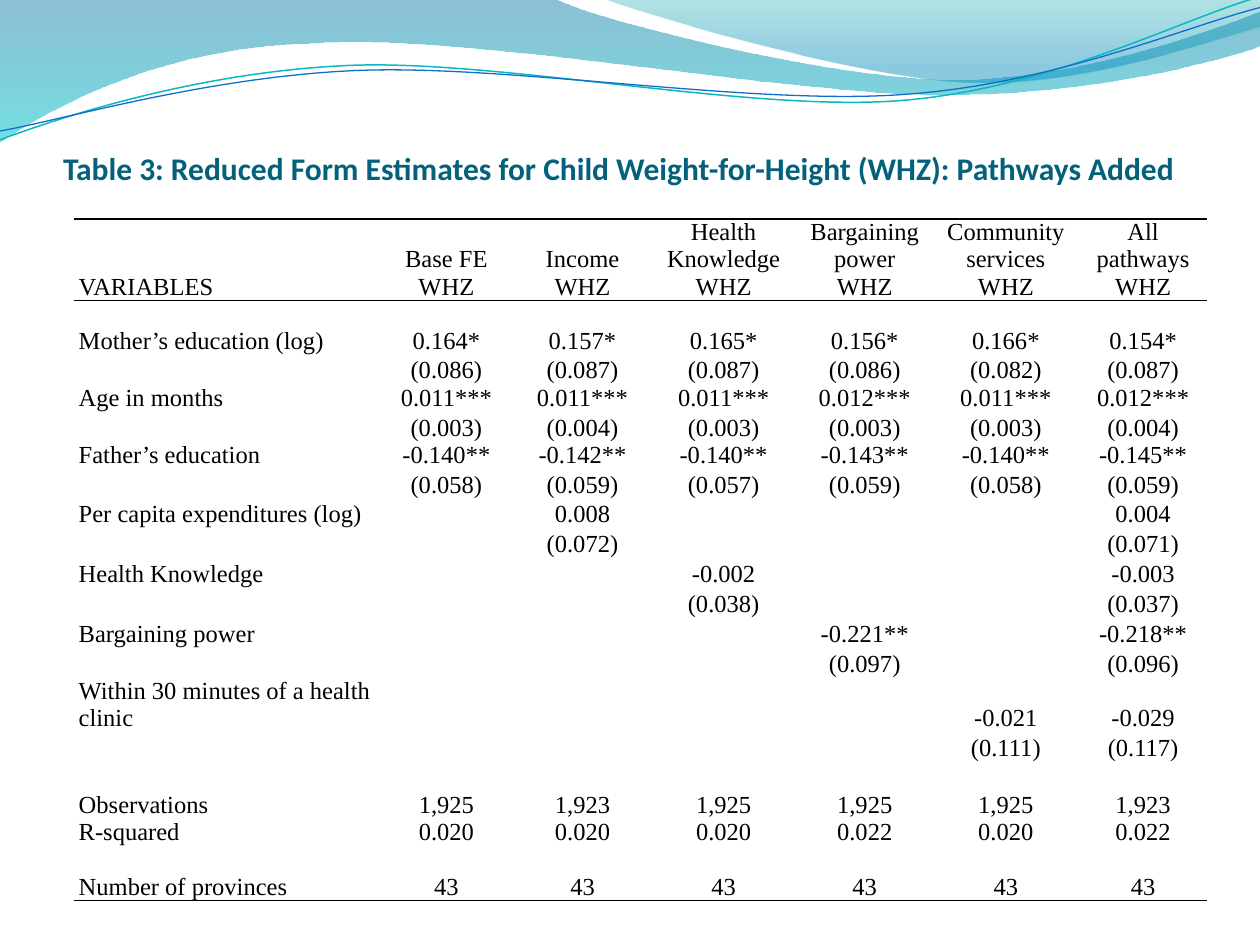
from lxml import etree
from pptx import Presentation
from pptx.dml.color import RGBColor
from pptx.enum.text import MSO_ANCHOR, PP_ALIGN
from pptx.oxml.ns import qn
from pptx.util import Pt

BOTTOM = MSO_ANCHOR.BOTTOM
LEFT, CENTER = PP_ALIGN.LEFT, PP_ALIGN.CENTER
TITLE_ONLY = 5
NO_STYLE_NO_GRID = "{2D5ABB26-0587-4C30-8999-92F81FD0307C}"

COLORS = {
    "title": "04617B", "text": "000000", "rule": "000000",
    "deep": "0074A1", "aqua": "00C6CF", "teal": "00A1A9", "sky": "008BBF",
    "teal line": "0AB8BF", "blue line": "0F6FC6",
}

# Each wave is a start point, then segments: 2 numbers for a line, 6 for a curve (inches).
BROAD_WAVE = [
    (0, 0), (4.4, -0.01), (4.76, 0.17, 6.64, 0.63, 7.58, 0.63),
    (8.53, 0.63, 9.58, 0.26, 10, 0.09), (10.01, 0.36),
    (9.83, 0.44, 8.7, 0.76, 7.46, 0.75), (6.22, 0.75, 3.82, 0.28, 2.57, 0.34),
    (1.29, 0.36, 0.46, 0.83, -0.01, 1.13),
]
RIGHT_WAVE = [
    (4.79, -0.01), (5.09, 0.11, 6.82, 0.62, 7.69, 0.65),
    (8.56, 0.69, 9.61, 0.32, 10, 0.21), (10, 0),
]
TEAL_LINE = [
    (0, 1.11), (0.48, 0.93, 1.58, 0.57, 2.77, 0.52),
    (3.95, 0.47, 5.93, 0.89, 7.13, 0.8), (8.33, 0.71, 9.38, 0.15, 9.98, -0.02),
]
BLUE_LINE = [
    (0, 1.04), (0.47, 0.96, 1.64, 0.61, 2.83, 0.56),
    (4.03, 0.51, 5.97, 0.84, 7.17, 0.75), (8.36, 0.67, 9.41, 0.21, 10, 0.06),
]

COLUMN_WIDTHS = [174.2, 77.8, 77.8, 83.5, 77.8, 83.5, 73.4]
TIGHT, LOOSE, DOUBLE = 15.4, 17.1, 30.9
ROWS = [
    (LOOSE, "||||||"),
    (DOUBLE, "|Base FE|Income|Health Knowledge|Bargaining power|Community services|All pathways"),
    (TIGHT, "VARIABLES|WHZ|WHZ|WHZ|WHZ|WHZ|WHZ"),
    (TIGHT, "||||||"),
    (TIGHT, "Mother’s education (log)|0.164*|0.157*|0.165*|0.156*|0.166*|0.154*"),
    (LOOSE, "|(0.086)|(0.087)|(0.087)|(0.086)|(0.082)|(0.087)"),
    (TIGHT, "Age in months|0.011***|0.011***|0.011***|0.012***|0.011***|0.012***"),
    (LOOSE, "|(0.003)|(0.004)|(0.003)|(0.003)|(0.003)|(0.004)"),
    (TIGHT, "Father’s education|-0.140**|-0.142**|-0.140**|-0.143**|-0.140**|-0.145**"),
    (LOOSE, "|(0.058)|(0.059)|(0.057)|(0.059)|(0.058)|(0.059)"),
    (LOOSE, "Per capita expenditures (log)||0.008||||0.004"),
    (LOOSE, "||(0.072)||||(0.071)"),
    (LOOSE, "Health Knowledge|||-0.002|||-0.003"),
    (LOOSE, "|||(0.038)|||(0.037)"),
    (LOOSE, "Bargaining power||||-0.221**||-0.218**"),
    (LOOSE, "||||(0.097)||(0.096)"),
    (DOUBLE, "Within 30 minutes of a health clinic|||||-0.021|-0.029"),
    (LOOSE, "|||||(0.111)|(0.117)"),
    (LOOSE, "||||||"),
    (TIGHT, "Observations|1,925|1,923|1,925|1,925|1,925|1,923"),
    (TIGHT, "R-squared|0.020|0.020|0.020|0.022|0.020|0.022"),
    (DOUBLE, "Number of provinces|43|43|43|43|43|43"),
]
LAST_ROW = len(ROWS) - 1
RULED_ROWS = (0, 2, LAST_ROW)


def color(name):
    return RGBColor.from_string(COLORS[name])


def point_pairs(segment):
    """Split a flat run of inches into (x, y) pairs of lengths."""
    lengths = [Pt(number * 72) for number in segment]
    return list(zip(lengths[::2], lengths[1::2]))


def set_borders(cell, ruled_edges):
    properties = cell._tc.get_or_add_tcPr()
    for position, edge in enumerate(("lnL", "lnR", "lnT", "lnB")):
        line = etree.Element(qn("a:" + edge), w=str(Pt(1)))
        if edge in ruled_edges:
            fill = etree.SubElement(line, qn("a:solidFill"))
            etree.SubElement(fill, qn("a:srgbClr"), val=COLORS["rule"])
        else:
            etree.SubElement(line, qn("a:noFill"))
        properties.insert(position, line)


class SlideBuilder:
    title_font = "Calibri"
    table_font = "Times New Roman"
    title_size = 18
    table_size = 14

    def __init__(self, slide):
        self.slide = slide

    def format_runs(self, paragraph, font, size, color_name, bold=False):
        for run in paragraph.runs:
            run.font.name = font
            run.font.size = Pt(size)
            run.font.bold = bold
            run.font.color.rgb = color(color_name)

    def title(self, text, left, top, width, height):
        shape = self.slide.shapes.title
        shape.left, shape.top, shape.width, shape.height = map(Pt, (left, top, width, height))
        frame = shape.text_frame
        frame.text = text
        frame.word_wrap = True
        frame.vertical_anchor = BOTTOM
        frame.margin_left = frame.margin_right = 0
        frame.margin_bottom = Pt(19)
        paragraph = frame.paragraphs[0]
        paragraph.alignment = LEFT
        self.format_runs(paragraph, self.title_font, self.title_size, "title", bold=True)

    def outline(self, segments, closed):
        """Build a freeform through the anchor points, then bend its curved segments."""
        pairs = [point_pairs(segment) for segment in segments]
        anchors = [points[-1] for points in pairs]
        builder = self.slide.shapes.build_freeform(*anchors[0], scale=1.0)
        builder.add_line_segments(anchors[1:], close=closed)
        shape = builder.convert_to_shape()
        shape.shadow.inherit = False
        straight_lines = list(shape._element.spPr.iter(qn("a:lnTo")))
        for line, points in zip(straight_lines, pairs[1:]):
            if len(points) == 3:
                curve = etree.Element(qn("a:cubicBezTo"))
                for x, y in points:
                    etree.SubElement(curve, qn("a:pt"),
                                     x=str(x - shape.left), y=str(y - shape.top))
                line.getparent().replace(line, curve)
        return shape

    def wave(self, segments, stops):
        """Fill a wave from top to bottom; a stop is color, position, opacity percent."""
        shape = self.outline(segments, closed=True)
        shape.line.fill.background()
        shape.fill.gradient()
        shape.fill.gradient_angle = 270
        for gradient_stop, (name, position, _) in zip(shape.fill.gradient_stops, stops):
            gradient_stop.color.rgb = color(name)
            gradient_stop.position = position
        elements = shape._element.spPr.iter(qn("a:srgbClr"))
        for element, (_, _, opacity) in zip(elements, stops):
            etree.SubElement(element, qn("a:alpha"), val=str(opacity * 1000))

    def wave_line(self, segments, color_name, width):
        shape = self.outline(segments, closed=False)
        shape.fill.background()
        shape.line.color.rgb = color(color_name)
        shape.line.width = Pt(width)

    def cell(self, cell, text, alignment, spacing):
        cell.fill.background()
        cell.vertical_anchor = BOTTOM
        cell.margin_left = cell.margin_right = Pt(3)
        cell.margin_top = cell.margin_bottom = 0
        paragraph = cell.text_frame.paragraphs[0]
        paragraph.text = text
        paragraph.alignment = alignment
        paragraph.line_spacing = spacing
        if text:
            self.format_runs(paragraph, self.table_font, self.table_size, "text")
        else:
            paragraph._p.get_or_add_endParaRPr().set("sz", "1200")

    def table(self, rows, widths, left, top):
        height = sum(row_height for row_height, _ in rows)
        table = self.slide.shapes.add_table(
            len(rows), len(widths), Pt(left), Pt(top), Pt(sum(widths)), Pt(height)).table
        table.first_row = table.horz_banding = False
        table._tbl.tblPr.find(qn("a:tableStyleId")).text = NO_STYLE_NO_GRID
        for column, width in zip(table.columns, widths):
            column.width = Pt(width)
        for row_index, (row_height, line) in enumerate(rows):
            table.rows[row_index].height = Pt(row_height)
            spacing = 2.0 if row_index == LAST_ROW else 1.0
            edges = [edge for edge, ruled_row in (("lnT", row_index - 1), ("lnB", row_index))
                     if ruled_row in RULED_ROWS]
            for column_index, text in enumerate(line.split("|")):
                cell = table.cell(row_index, column_index)
                self.cell(cell, text, CENTER if column_index else LEFT, spacing)
                set_borders(cell, edges)


def main():
    presentation = Presentation()
    presentation.slide_width, presentation.slide_height = Pt(720), Pt(540)
    layout = presentation.slide_layouts[TITLE_ONLY]
    builder = SlideBuilder(presentation.slides.add_slide(layout))
    builder.wave(BROAD_WAVE, [("deep", 0, 45), ("aqua", 1, 55)])
    builder.wave(RIGHT_WAVE, [("teal", 0, 30), ("sky", 0.8, 45)])
    builder.wave_line(TEAL_LINE, "teal line", 0.85)
    builder.wave_line(BLUE_LINE, "blue line", 0.75)
    builder.title(
        "Table 3: Reduced Form Estimates for Child Weight-for-Height (WHZ): Pathways Added",
        36, 54, 648, 72)
    builder.table(ROWS, COLUMN_WIDTHS, 42, 108)
    presentation.save("out.pptx")


if __name__ == "__main__":
    main()
